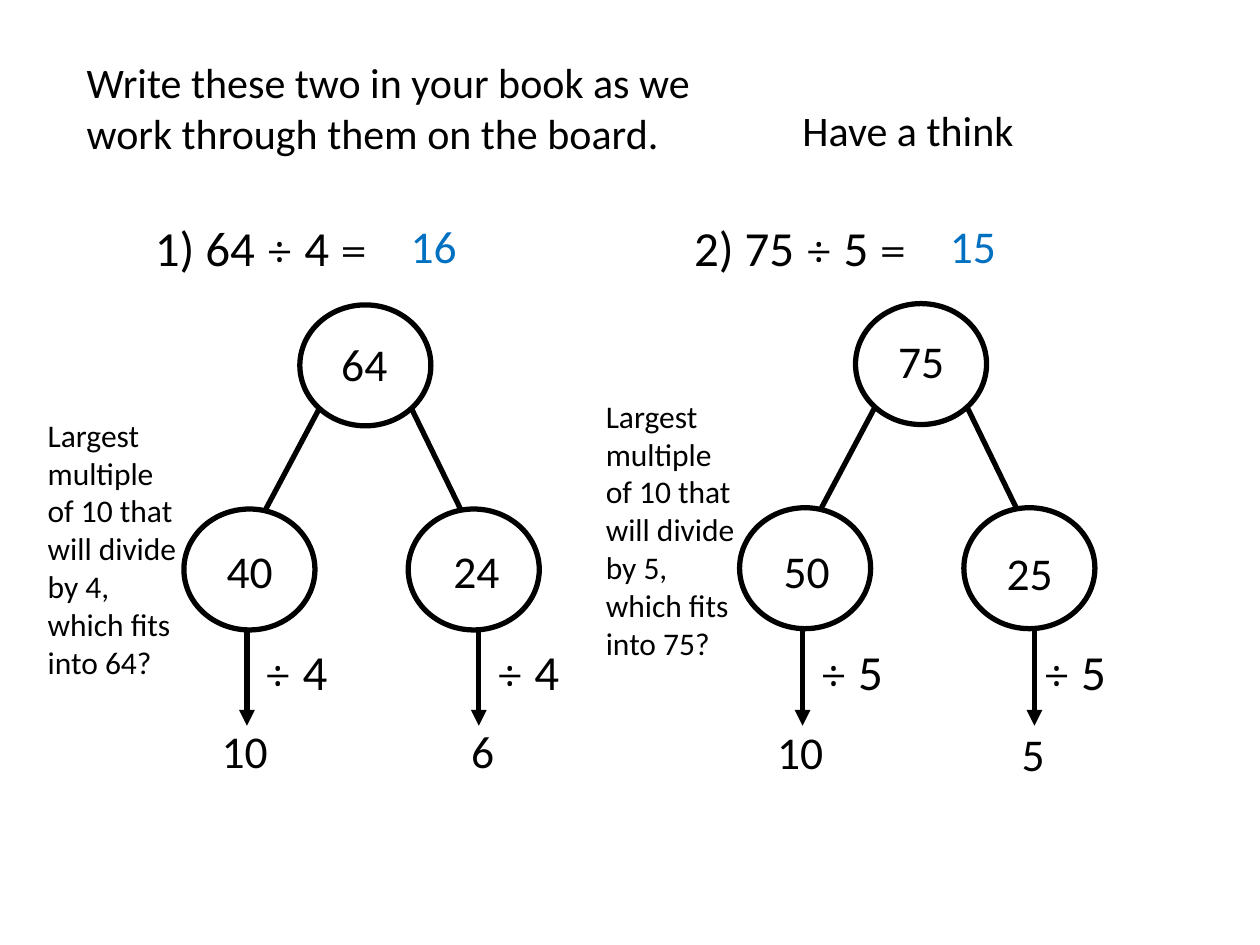
from lxml.etree import SubElement
from pptx import Presentation
from pptx.dml.color import RGBColor
from pptx.enum.shapes import MSO_CONNECTOR, MSO_SHAPE
from pptx.enum.text import MSO_AUTO_SIZE
from pptx.oxml.ns import qn
from pptx.util import Inches, Pt

BLACK = "000000"
BLUE = "0070C0"
WHITE = "FFFFFF"


def color(value):
    return RGBColor.from_string(value)


def add_text(page, text, left, top, width, height, size, fill=BLACK, wrap=True):
    box = page.shapes.add_textbox(Inches(left), Inches(top), Inches(width), Inches(height))
    frame = box.text_frame
    frame.word_wrap = wrap
    frame.auto_size = MSO_AUTO_SIZE.SHAPE_TO_FIT_TEXT
    paragraph = frame.paragraphs[0]
    for part in split_symbols(text):
        span = paragraph.add_run()
        span.text = part
        span.font.name = "Cambria" if part in "÷=" else "Calibri"
        span.font.size = Pt(size)
        span.font.color.rgb = color(fill)


def split_symbols(text):
    marked = text.replace("÷", "|÷|").replace("=", "|=|")
    return [part for part in marked.split("|") if part]


def add_number(page, text, left, top, fill=BLACK):
    add_text(page, text, left, top, 0.68, 0.54, 26, fill)


def add_circle(group, left, top):
    circle = group.shapes.add_shape(
        MSO_SHAPE.OVAL, Inches(left), Inches(top), Inches(1.04), Inches(0.96)
    )
    circle.shadow.inherit = False
    circle.fill.solid()
    circle.fill.fore_color.rgb = color(WHITE)
    circle.line.color.rgb = color(BLACK)
    circle.line.width = Pt(3)


def add_line(parent, start_x, start_y, end_x, end_y, arrow=False):
    line = parent.shapes.add_connector(
        MSO_CONNECTOR.STRAIGHT,
        Inches(start_x), Inches(start_y), Inches(end_x), Inches(end_y),
    )
    line.line.color.rgb = color(BLACK)
    line.line.width = Pt(3)
    if arrow:
        SubElement(line.line._get_or_add_ln(), qn("a:tailEnd"), type="triangle")
    SubElement(line._element.spPr, qn("a:effectLst"))


def add_tree(page, left, top):
    group = page.shapes.add_group_shape()
    for x, y in ((0.92, 0), (0, 1.62), (1.78, 1.62)):
        add_circle(group, left + x, top + y)
    add_line(group, left + 1.07, top + 0.83, left + 0.65, top + 1.62)
    add_line(group, left + 1.81, top + 0.83, left + 2.2, top + 1.63)


def add_problem(page, left, tree_top, question, numbers, divisor, divisor_lefts):
    add_tree(page, left, tree_top)
    add_text(page, *question, 1.68, 2.15, 0.57, 28, wrap=False)
    for x in (0.5, 2.34):
        add_line(page, left + x, 5.01, left + x, 5.76, arrow=True)
    for x in divisor_lefts:
        add_text(page, f"÷ {divisor}", x, 5.04, 0.78, 0.57, 28, wrap=False)
    for text, x, y in numbers:
        add_number(page, text, x, y)


def add_hint(page, divisor, total, left, top):
    text = f"Largest multiple of 10 that will divide by {divisor}, which fits into {total}?"
    add_text(page, text, left, top, 1.27, 2.22, 18)


def main():
    deck = Presentation()
    deck.slide_width = Inches(10)
    deck.slide_height = Inches(7.5)
    page = deck.slides.add_slide(deck.slide_layouts[6])

    add_text(page, "Write these two in your book as we work through them on the board.",
             0.59, 0.4, 5.14, 0.91, 24)
    add_text(page, "Have a think", 6.27, 0.78, 2.29, 0.5, 24)

    first_numbers = [("64", 2.61, 2.62), ("40", 1.7, 4.26), ("24", 3.5, 4.26),
                     ("10", 1.66, 5.69), ("6", 3.64, 5.69)]
    second_numbers = [("75", 7.03, 2.59), ("50", 6.12, 4.26), ("25", 7.89, 4.28),
                      ("10", 6.07, 5.7), ("5", 8.01, 5.71)]
    add_problem(page, 1.46, 2.42, ("1) 64 ÷ 4 =", 1.13), first_numbers, 4, (2, 3.84))
    add_problem(page, 5.87, 2.41, ("2) 75 ÷ 5 =", 5.41), second_numbers, 5, (6.41, 8.18))

    add_number(page, "16", 3.16, 1.68, BLUE)
    add_number(page, "15", 7.44, 1.68, BLUE)
    add_hint(page, 4, 64, 0.28, 3.25)
    add_hint(page, 5, 75, 4.71, 3.1)
    deck.save("out.pptx")


if __name__ == "__main__":
    main()
